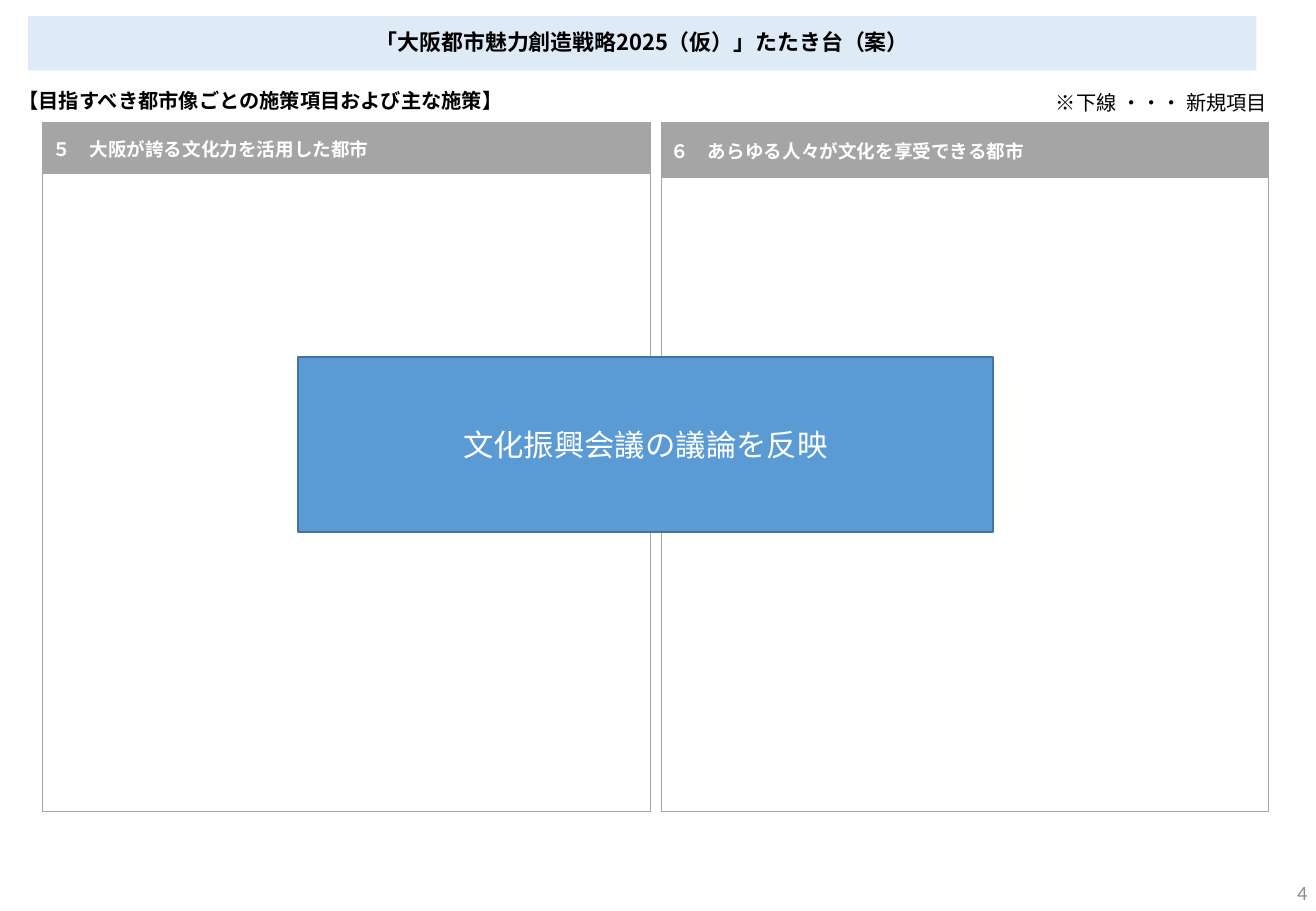
from pptx import Presentation, util as u
from pptx.dml.color import RGBColor
from pptx.enum import shapes, text
from pptx.oxml.ns import qn
from lxml import etree

W, H = 10.83, 7.5
JP, LATIN = "Noto Sans CJK JP", "Calibri"
COLORS = {"band": "DEEBF7", "grey": "A5A5A5", "box": "5B9BD5", "edge": "43739E",
          "ink": "000000", "white": "FFFFFF", "number": "8C8C8C"}
ALIGN = text.PP_ALIGN

# Panel grid: two columns with one shared top and bottom
LEFT, TOP, COL_W, COL_H, GAP = 0.35, 1.01, 5, 5.67, 0.09
PANELS = [("５　大阪が誇る文化力を活用した都市", 0.42),
          ("６　あらゆる人々が文化を享受できる都市", 0.45)]


def rgb(name):
    return RGBColor.from_string(COLORS[name])


def box(x, y, w, h):
    return [u.Inches(v) for v in (x, y, w, h)]


def write(tf, words, size, color, bold=False, align=ALIGN.CENTER, font=JP, spacing=None):
    tf.word_wrap = True
    tf.vertical_anchor = text.MSO_ANCHOR.MIDDLE
    p = tf.paragraphs[0]
    p.text = words
    p.alignment = align
    p.line_spacing = spacing
    f = p.font
    f.size, f.bold, f.name = u.Pt(size), bold, font
    f.color.rgb = rgb(color)
    # East Asian typeface
    ea = etree.SubElement(p._p.pPr.find(qn("a:defRPr")), qn("a:ea"))
    ea.set("typeface", JP)


def add_title(s, words):
    sp = s.shapes.title
    sp.left, sp.top, sp.width, sp.height = box(0.23, 0.13, 10.11, 0.45)
    sp.fill.solid()
    sp.fill.fore_color.rgb = rgb("band")
    write(sp.text_frame, words, 13, "ink", bold=True, spacing=0.9)


def add_label(s, words, place, size=12, color="ink", **style):
    sp = s.shapes.add_textbox(*box(*place))
    tf = sp.text_frame
    tf.margin_left = tf.margin_right = u.Inches(0.08)
    tf.margin_top = tf.margin_bottom = u.Inches(0.04)
    write(tf, words, size, color, **style)


def set_borders(cell):
    tc_pr = cell._tc.get_or_add_tcPr()
    for i, side in enumerate(("a:lnL", "a:lnR", "a:lnT", "a:lnB")):
        ln = etree.Element(qn(side), w=str(u.Pt(0.5)))
        fill = etree.SubElement(ln, qn("a:solidFill"))
        etree.SubElement(fill, qn("a:srgbClr"), val=COLORS["grey"])
        tc_pr.insert(i, ln)


def add_panel(s, column, heading, head_h):
    x = LEFT + column * (COL_W + GAP)
    table = s.shapes.add_table(2, 1, *box(x, TOP, COL_W, COL_H)).table
    for row, height, fill in zip(table.rows, (head_h, COL_H - head_h), ("grey", "white")):
        row.height = u.Inches(height)
        cell = row.cells[0]
        cell.fill.solid()
        cell.fill.fore_color.rgb = rgb(fill)
        set_borders(cell)
    head = table.cell(0, 0)
    head.margin_left = head.margin_right = u.Inches(0.08)
    head.margin_top = head.margin_bottom = u.Inches(0.04)
    write(head.text_frame, heading, 11, "white", bold=True, align=ALIGN.LEFT)
    head.vertical_anchor = text.MSO_ANCHOR.MIDDLE


def add_notice(s, words):
    sp = s.shapes.add_shape(shapes.MSO_SHAPE.RECTANGLE, *box(2.45, 2.94, 5.72, 1.44))
    sp.shadow.inherit = False
    sp.fill.solid()
    sp.fill.fore_color.rgb = rgb("box")
    sp.line.color.rgb = rgb("edge")
    sp.line.width = u.Pt(1)
    write(sp.text_frame, words, 18, "white", font=LATIN)


def main():
    prs = Presentation()
    prs.slide_width, prs.slide_height = u.Inches(W), u.Inches(H)
    s = prs.slides.add_slide(prs.slide_layouts[5])

    # Heading lines
    add_title(s, "「大阪都市魅力創造戦略2025（仮）」たたき台（案）")
    add_label(s, "【目指すべき都市像ごとの施策項目および主な施策】", (-0.11, 0.62, 4.51, 0.41),
              bold=True, spacing=u.Pt(14.6))
    add_label(s, "※下線 ・・・ 新規項目", (8.5, 0.64, 2.12, 0.41), spacing=u.Pt(14.6))

    # Panels with the notice across them
    for column, (heading, head_h) in enumerate(PANELS):
        add_panel(s, column, heading, head_h)
    add_notice(s, "文化振興会議の議論を反映")

    # Page number
    add_label(s, "4", (8.4, 7.15, 2.44, 0.4), color="number", align=ALIGN.RIGHT, font=LATIN)

    prs.save("out.pptx")


if __name__ == "__main__":
    main()
